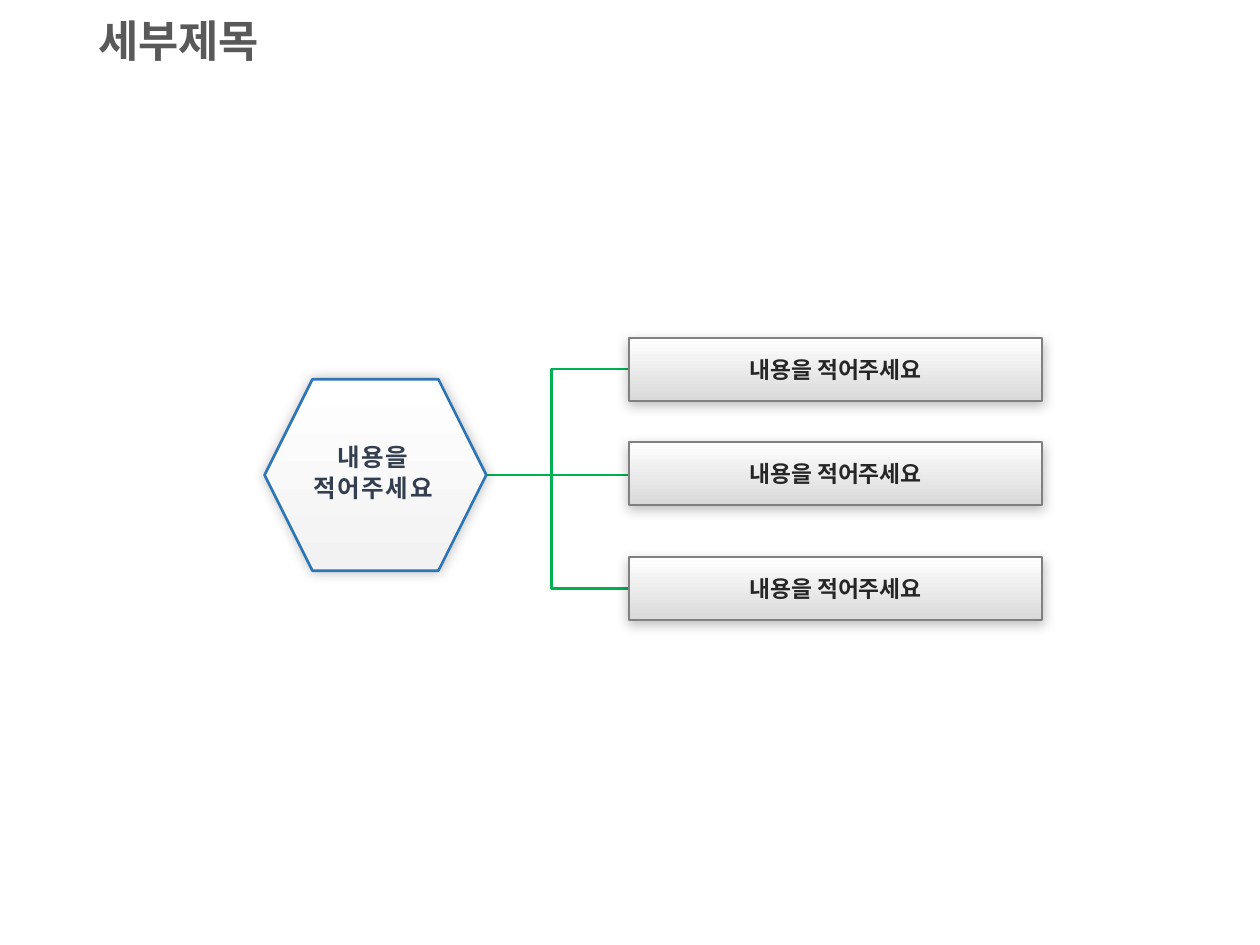
from lxml import etree
from pptx import Presentation
from pptx.dml.color import RGBColor
from pptx.enum.shapes import MSO_CONNECTOR, MSO_SHAPE
from pptx.enum.text import MSO_ANCHOR, PP_ALIGN
from pptx.oxml.ns import qn
from pptx.util import Inches, Pt

ELBOW, STRAIGHT = MSO_CONNECTOR.ELBOW, MSO_CONNECTOR.STRAIGHT
HEXAGON, RECTANGLE = MSO_SHAPE.HEXAGON, MSO_SHAPE.RECTANGLE
MIDDLE, TOP = MSO_ANCHOR.MIDDLE, MSO_ANCHOR.TOP
CENTER, LEFT = PP_ALIGN.CENTER, PP_ALIGN.LEFT

WHITE = RGBColor(0xFF, 0xFF, 0xFF)
PALE_GRAY = RGBColor(0xF2, 0xF2, 0xF2)
LIGHT_GRAY = RGBColor(0xD9, 0xD9, 0xD9)
BORDER_GRAY = RGBColor(0x80, 0x80, 0x80)
TITLE_GRAY = RGBColor(0x59, 0x59, 0x59)
ITEM_INK = RGBColor(0x26, 0x26, 0x26)
NAVY = RGBColor(0x33, 0x3F, 0x50)
BLUE = RGBColor(0x2E, 0x75, 0xB6)
GREEN = RGBColor(0x00, 0xB0, 0x50)

LATIN_FONT, KOREAN_FONT = "Calibri", "Noto Sans CJK KR"
WIDTH, HEIGHT = Inches(10), Inches(7.5)
HUB_MIDDLE = 50.27
ITEM_LEFT, ITEM_WIDTH, ITEM_HEIGHT = 49.9, 32.8, 6.67
ITEMS = [
    (35.73, "내용을 적어주세요"),
    (46.8, "내용을 적어주세요"),
    (58.93, "내용을 적어주세요"),
]


def across(percent):
    return round(WIDTH * percent / 100)


def down(percent):
    return round(HEIGHT * percent / 100)


def area(left, top, width, height):
    return across(left), down(top), across(width), down(height)


def write(shape, text, size, color, font, align=CENTER, anchor=MIDDLE,
          line_spacing=None, letter_spacing=None):
    frame = shape.text_frame
    frame.word_wrap = True
    frame.vertical_anchor = anchor
    frame.text = text
    for para in frame.paragraphs:
        para.alignment = align
        para.line_spacing = line_spacing
        for span in para.runs:
            span.font.size = Pt(size)
            span.font.bold = True
            span.font.color.rgb = color
            span.font.name = font
            properties = span.font._element
            etree.SubElement(properties, qn("a:ea"), typeface=font)
            if letter_spacing:
                properties.set("spc", str(letter_spacing * 100))


def add_text(page, place, text, size, color, font, **layout):
    box = page.shapes.add_textbox(*place)
    write(box, text, size, color, font, **layout)


def add_shadow(shape, distance, angle):
    shape.shadow.inherit = False
    effects = shape._element.spPr.find(qn("a:effectLst"))
    shadow = etree.SubElement(
        effects, qn("a:outerShdw"), blurRad=str(Pt(7)), dist=str(Pt(distance)),
        dir=str(angle * 60000), algn="ctr", rotWithShape="0")
    color = etree.SubElement(shadow, qn("a:srgbClr"), val="000000")
    etree.SubElement(color, qn("a:alpha"), val="25000")


def add_panel(page, kind, place, bottom_color, line_color, line_width,
              shadow_distance, shadow_angle):
    panel = page.shapes.add_shape(kind, *place)
    panel.fill.gradient()
    panel.fill.gradient_angle = 270
    for stop, color in zip(panel.fill.gradient_stops, (WHITE, bottom_color)):
        stop.color.rgb = color
    panel.line.color.rgb = line_color
    panel.line.width = Pt(line_width)
    add_shadow(panel, shadow_distance, shadow_angle)
    return panel


def add_link(page, kind, start, end):
    link = page.shapes.add_connector(
        kind, across(start[0]), down(start[1]), across(end[0]), down(end[1]))
    link.line.color.rgb = GREEN
    link.line.width = Pt(1.5)
    etree.SubElement(link._element.spPr, qn("a:effectLst"))


def add_item(page, top, text):
    place = area(ITEM_LEFT, top, ITEM_WIDTH, ITEM_HEIGHT)
    item = add_panel(page, RECTANGLE, place, LIGHT_GRAY, BORDER_GRAY, 1, 2, 90)
    write(item, text, 13, ITEM_INK, KOREAN_FONT)


def add_hub(page):
    add_panel(page, HEXAGON, area(21, 40.13, 17.6, 20.27),
              PALE_GRAY, BLUE, 1.5, 0, 0)
    add_text(page, area(21, 45.87, 17.2, 8.13), "내용을\n적어주세요", 14, NAVY,
             KOREAN_FONT, anchor=TOP, line_spacing=Pt(18), letter_spacing=1)


def main():
    deck = Presentation()
    deck.slide_width, deck.slide_height = WIDTH, HEIGHT
    page = deck.slides.add_slide(deck.slide_layouts[6])
    add_text(page, area(6.8, 0.8, 86.2, 7.6), "세부제목", 25, TITLE_GRAY,
             LATIN_FONT, align=LEFT, line_spacing=0.9)
    for top, text in (ITEMS[-1], ITEMS[0]):
        add_link(page, ELBOW, (34.8, HUB_MIDDLE), (52.7, top + ITEM_HEIGHT / 2))
    add_link(page, STRAIGHT, (36.6, HUB_MIDDLE), (53, HUB_MIDDLE))
    add_hub(page)
    for top, text in ITEMS:
        add_item(page, top, text)
    deck.save("out.pptx")


if __name__ == "__main__":
    main()
